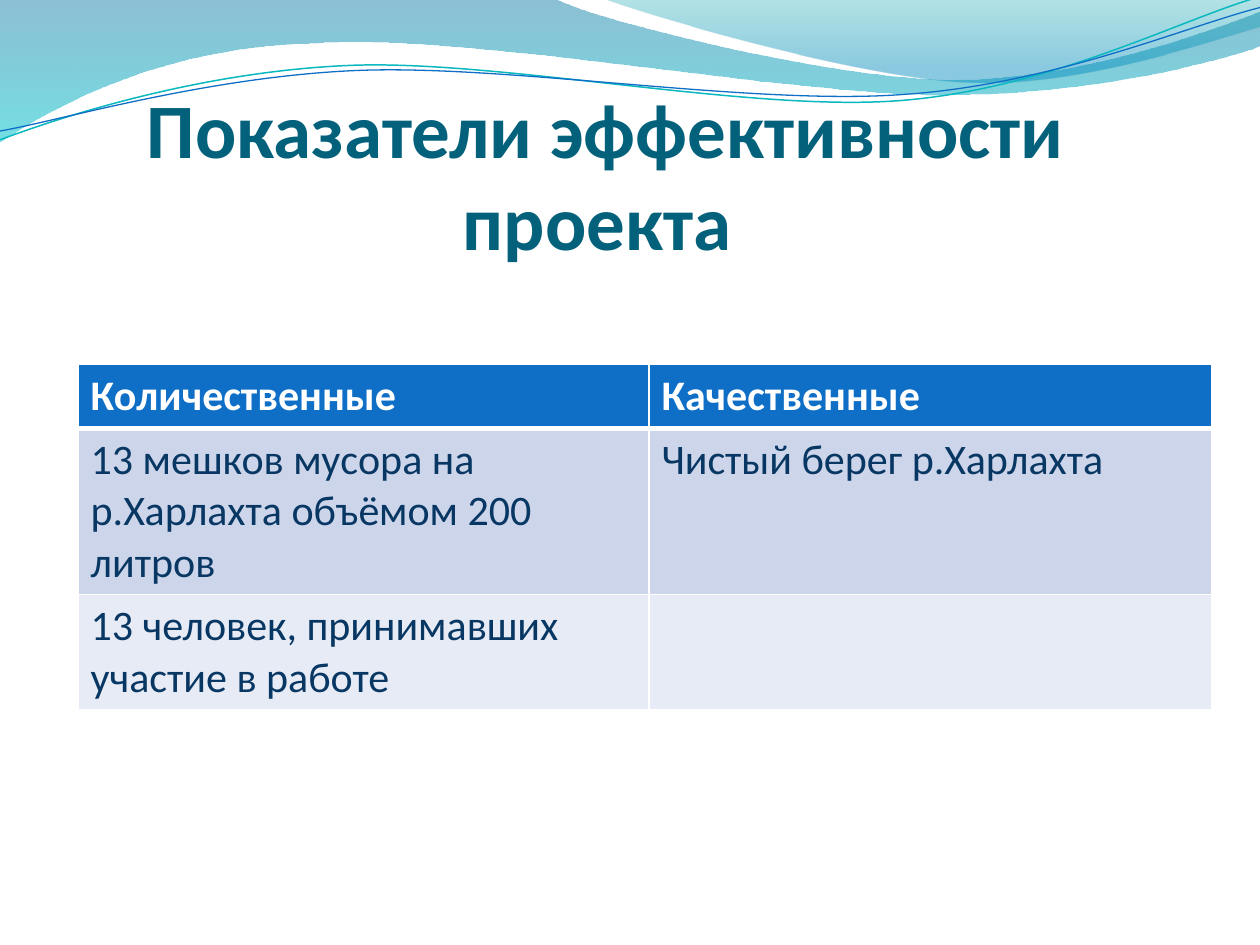
from lxml import etree
from pptx import Presentation
from pptx.dml.color import RGBColor
from pptx.enum.text import MSO_ANCHOR, PP_ALIGN
from pptx.oxml.ns import qn
from pptx.util import Inches, Pt

BOTTOM = MSO_ANCHOR.BOTTOM
CENTER = PP_ALIGN.CENTER
FONT = "Calibri"
WHITE = RGBColor(0xFF, 0xFF, 0xFF)
TITLE_TEAL = RGBColor(0x04, 0x61, 0x7B)
NAVY = RGBColor(0x08, 0x37, 0x63)
BLUE = RGBColor(0x0F, 0x6F, 0xC6)
TURQUOISE = RGBColor(0x0A, 0xB8, 0xBF)
BAND_DARK = RGBColor(0xCC, 0xD5, 0xEA)
BAND_LIGHT = RGBColor(0xE7, 0xEB, 0xF5)
DEEP_BLUE = RGBColor(0x00, 0x74, 0xA1)
AQUA = RGBColor(0x00, 0xC6, 0xCF)
SEA_GREEN = RGBColor(0x00, 0xA1, 0xA9)
SKY_BLUE = RGBColor(0x00, 0x8B, 0xBF)

deck = Presentation()
deck.slide_width, deck.slide_height = Inches(10), Inches(7.5)
page = deck.slides.add_slide(deck.slide_layouts[6])


def add_wave(start, segments, closed):
    """Draw a freeform; a segment is one line end or three Bezier points."""
    builder = page.shapes.build_freeform(Inches(start[0]), Inches(start[1]), scale=1.0)
    ends = [segment[-1] for segment in segments]
    builder.add_line_segments([(Inches(x), Inches(y)) for x, y in ends], close=closed)
    wave = builder.convert_to_shape()
    wave.shadow.inherit = False
    # Turn the straight pieces into curves where control points are given
    pieces = list(wave.element.spPr.iter(qn("a:lnTo")))
    for piece, segment in zip(pieces, segments):
        if len(segment) == 3:
            curve = etree.Element(qn("a:cubicBezTo"))
            for x, y in segment:
                etree.SubElement(curve, qn("a:pt"), x=str(Inches(x) - wave.left),
                                 y=str(Inches(y) - wave.top))
            piece.getparent().replace(piece, curve)
    return wave


# Translucent gradient waves along the top
gradient_waves = [
    ((0, 0),
     [[(4.4, -0.01)],
      [(4.76, 0.17), (6.64, 0.63), (7.58, 0.63)],
      [(8.53, 0.63), (9.58, 0.26), (10, 0.09)],
      [(10.01, 0.36)],
      [(9.83, 0.44), (8.7, 0.76), (7.46, 0.75)],
      [(6.22, 0.75), (3.82, 0.28), (2.57, 0.34)],
      [(1.29, 0.36), (0.46, 0.83), (-0.01, 1.13)],
      [(0, 0)]],
     [(0, DEEP_BLUE, 45), (1, AQUA, 55)]),
    ((4.79, -0.01),
     [[(5.09, 0.11), (6.82, 0.62), (7.69, 0.65)],
      [(8.56, 0.69), (9.61, 0.32), (10, 0.21)],
      [(10, 0)],
      [(4.79, -0.01)]],
     [(0, SEA_GREEN, 30), (0.8, SKY_BLUE, 45)]),
]
for start, segments, stops in gradient_waves:
    wave = add_wave(start, segments, True)
    wave.line.fill.background()
    wave.fill.gradient()
    wave.fill.gradient_angle = 270
    for stop, (position, color, _) in zip(wave.fill.gradient_stops, stops):
        stop.position = position
        stop.color.rgb = color
    for color_node, (_, _, opacity) in zip(wave.element.spPr.iter(qn("a:srgbClr")), stops):
        etree.SubElement(color_node, qn("a:alpha"), val=str(opacity * 1000))

# Thin wave lines
thin_waves = [
    ((0, 1.11),
     [[(0.48, 0.93), (1.58, 0.57), (2.77, 0.52)],
      [(3.95, 0.47), (5.93, 0.89), (7.13, 0.8)],
      [(8.33, 0.71), (9.38, 0.15), (9.98, -0.02)]], TURQUOISE, 0.85),
    ((0, 1.04),
     [[(0.47, 0.96), (1.64, 0.61), (2.83, 0.56)],
      [(4.03, 0.51), (5.97, 0.84), (7.17, 0.75)],
      [(8.36, 0.67), (9.41, 0.21), (10, 0.06)]], BLUE, 0.75),
]
for start, segments, color, width in thin_waves:
    wave = add_wave(start, segments, False)
    wave.fill.background()
    wave.line.color.rgb = color
    wave.line.width = Pt(width)

# Title
title = page.shapes.add_textbox(Inches(0.31), Inches(0.86), Inches(9), Inches(1.25))
frame = title.text_frame
frame.word_wrap = True
frame.vertical_anchor = BOTTOM
frame.margin_left = frame.margin_right = frame.margin_bottom = 0
frame.margin_top = Inches(0.05)
frame.text = "Показатели эффективности проекта "
para = frame.paragraphs[0]
para.alignment = CENTER
font = para.runs[0].font
font.name, font.size, font.bold = FONT, Pt(44), True
font.color.rgb = TITLE_TEAL

# Table of indicators
rows = [
    ("Количественные", "Качественные"),
    ("13 мешков мусора на р.Харлахта объёмом 200 литров", "Чистый берег р.Харлахта"),
    ("13 человек, принимавших участие в работе", ""),
]
row_fills = [BLUE, BAND_DARK, BAND_LIGHT]
table = page.shapes.add_table(3, 2, Inches(0.62), Inches(2.89), Inches(9), Inches(2.74)).table
for column, width in zip(table.columns, (4.53, 4.47)):
    column.width = Inches(width)
for row, height in zip(table.rows, (0.51, 1.32, 0.91)):
    row.height = Inches(height)

for r, texts in enumerate(rows):
    for c, text in enumerate(texts):
        cell = table.cell(r, c)
        cell.fill.solid()
        cell.fill.fore_color.rgb = row_fills[r]
        cell.text_frame.text = text
        for span in cell.text_frame.paragraphs[0].runs:
            span.font.name, span.font.size, span.font.bold = FONT, Pt(24), r == 0
            span.font.color.rgb = WHITE if r == 0 else NAVY
        # White borders, thicker under the header
        properties = cell._tc.get_or_add_tcPr()
        for index, side in enumerate("LRTB"):
            thick = (r, side) in ((0, "B"), (1, "T"))
            border = etree.Element(qn("a:ln" + side), w=str(Pt(3 if thick else 1)))
            fill = etree.SubElement(border, qn("a:solidFill"))
            etree.SubElement(fill, qn("a:srgbClr"), val=str(WHITE))
            properties.insert(index, border)

deck.save("out.pptx")
